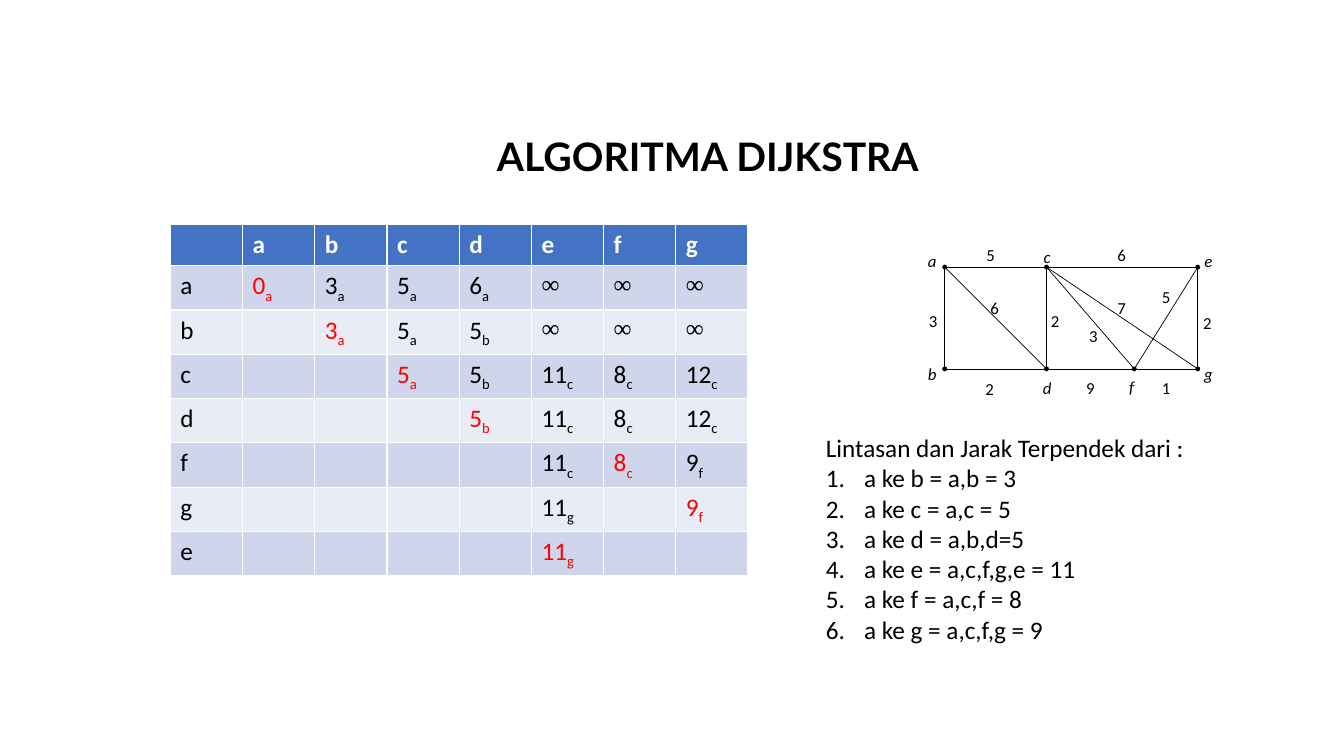
from lxml import etree
from pptx import Presentation
from pptx import util as u
from pptx.dml.color import RGBColor
from pptx.enum import shapes, text
from pptx.oxml import ns

BLACK = RGBColor(0x00, 0x00, 0x00)
WHITE = RGBColor(0xFF, 0xFF, 0xFF)
RED = RGBColor(0xFF, 0x00, 0x00)
BLUE = RGBColor(0x44, 0x72, 0xC4)
BANDS = (RGBColor(0xE9, 0xEB, 0xF5), RGBColor(0xCF, 0xD5, 0xEA))

# Distance table: node reached, then "distance + previous node" per column
COLS = "abcdefg"
STEPS = [
    ("a", "0a 3a 5a 6a ∞ ∞ ∞"),
    ("b", "- 3a 5a 5b ∞ ∞ ∞"),
    ("c", "- - 5a 5b 11c 8c 12c"),
    ("d", "- - - 5b 11c 8c 12c"),
    ("f", "- - - - 11c 8c 9f"),
    ("g", "- - - - 11g - 9f"),
    ("e", "- - - - 11g - -"),
]

# Graph: nodes, inner edges, labels by left and top
TOP, LOW = 2.65, 3.66
NODES = {"a": (9.37, TOP), "c": (10.38, TOP), "e": (11.88, TOP),
         "b": (9.37, LOW), "d": (10.38, LOW), "f": (11.25, LOW),
         "g": (11.88, LOW)}
EDGES = ("cd", "ad", "cg", "cf", "fe")
NAMES = [("a", 9.14, 2.44), ("b", 9.14, 3.56), ("c", 10.28, 2.4),
         ("d", 10.28, 3.7), ("e", 11.88, 2.44), ("f", 11.12, 3.69),
         ("g", 11.88, 3.56)]
COSTS = [("1", 11.5, 3.7), ("9", 10.75, 3.7), ("2", 9.75, 3.71),
         ("3", 9.19, 3.03), ("2", 11.91, 3.05), ("6", 11.06, 2.38),
         ("5", 9.76, 2.38), ("3", 10.78, 3.18), ("6", 9.8, 2.9),
         ("2", 10.4, 3.03), ("5", 11.5, 2.8), ("7", 11.06, 2.9)]

HEAD = "Lintasan dan Jarak Terpendek dari :"
PATHS = ["a ke b = a,b = 3", "a ke c = a,c = 5", "a ke d = a,b,d=5",
         "a ke e = a,c,f,g,e = 11", "a ke f = a,c,f = 8",
         "a ke g = a,c,f,g = 9"]


class Page:
    """Style and current slide."""

    def __init__(self, slide):
        self.slide = slide
        self.items = slide.shapes

    def place(self, item, x, y, w, h):
        item.left, item.top = u.Inches(x), u.Inches(y)
        item.width, item.height = u.Inches(w), u.Inches(h)

    def style(self, par, size, color=BLACK, name="Calibri", bold=False,
              slant=False):
        font = par.font
        font.size, font.name = u.Pt(size), name
        font.bold, font.italic = bold, slant
        font.color.rgb = color

    def title(self, words, x, y, w, h):
        item = self.items.title
        self.place(item, x, y, w, h)
        frame = item.text_frame
        frame.auto_size = text.MSO_AUTO_SIZE.NONE
        frame.vertical_anchor = text.MSO_ANCHOR.MIDDLE
        frame.text = words
        par = frame.paragraphs[0]
        par.alignment = text.PP_ALIGN.CENTER
        par.line_spacing = 0.9
        self.style(par, 28, name="Lato", bold=True)

    def bullet(self, par, tag, indent, **attrs):
        props = par._p.get_or_add_pPr()
        props.set("marL", str(u.Inches(indent)))
        props.set("indent", str(-u.Inches(indent)))
        etree.SubElement(props, ns.qn("a:" + tag), **attrs)

    def list(self, head, lines, x, y, w, h):
        item = self.slide.placeholders[1]
        self.place(item, x, y, w, h)
        frame = item.text_frame
        frame.auto_size = text.MSO_AUTO_SIZE.NONE
        frame.vertical_anchor = text.MSO_ANCHOR.TOP
        frame.text = "\n".join([head, *lines])
        for i, par in enumerate(frame.paragraphs):
            if i:
                self.bullet(par, "buAutoNum", 0.38, type="arabicPeriod")
            else:
                self.bullet(par, "buNone", 0)
            par.space_before = u.Pt(0)
            self.style(par, 18)

    def cell(self, cell, words, fill, color=BLACK, bold=False):
        cell.fill.solid()
        cell.fill.fore_color.rgb = fill
        par = cell.text_frame.paragraphs[0]
        name = "Times New Roman" if words == "∞" else "Calibri"
        self.style(par, 18, color, name, bold)
        if len(words) > 1:
            par.add_run().text = words[:-1]
            sub = par.add_run()
            sub.text = words[-1]
            sub.font._element.set("baseline", "-25000")
        elif words:
            par.add_run().text = words

    def table(self, x, y, w, h):
        grid = self.items.add_table(
            len(STEPS) + 1, len(COLS) + 1, u.Inches(x), u.Inches(y),
            u.Inches(w), u.Inches(h)).table
        for j, name in enumerate(" " + COLS):
            self.cell(grid.cell(0, j), name.strip(), BLUE, WHITE, True)
        for i, (node, row) in enumerate(STEPS, 1):
            self.cell(grid.cell(i, 0), node, BANDS[i % 2])
            for j, (col, item) in enumerate(zip(COLS, row.split()), 1):
                color = RED if col == node else BLACK
                self.cell(grid.cell(i, j), item.strip("-"), BANDS[i % 2],
                          color)

    def shape(self, kind, x, y, w, h, fill=None):
        item = self.items.add_shape(kind, u.Inches(x), u.Inches(y),
                                    u.Inches(w), u.Inches(h))
        item.shadow.inherit = False
        if fill is None:
            item.fill.background()
        else:
            item.fill.solid()
            item.fill.fore_color.rgb = fill
        item.line.color.rgb = BLACK
        item.line.width = u.Pt(0.5)

    def line(self, start, end):
        ends = [u.Inches(v) for v in (*start, *end)]
        item = self.items.add_connector(shapes.MSO_CONNECTOR.STRAIGHT, *ends)
        item.line.color.rgb = BLACK
        item.line.width = u.Pt(0.5)
        etree.SubElement(item._element.spPr, ns.qn("a:effectLst"))

    def label(self, words, x, y, w, slant=False):
        item = self.items.add_textbox(u.Inches(x), u.Inches(y),
                                      u.Inches(w), u.Inches(0.25))
        frame = item.text_frame
        frame.word_wrap = True
        frame.margin_left = frame.margin_right = 0
        frame.text = words
        par = frame.paragraphs[0]
        par.alignment = text.PP_ALIGN.CENTER
        self.style(par, 12, slant=slant)


def main():
    deck = Presentation()
    deck.slide_width, deck.slide_height = u.Inches(13.33), u.Inches(7.5)
    page = Page(deck.slides.add_slide(deck.slide_layouts[1]))

    # Title and table
    page.title("ALGORITMA DIJKSTRA", 1.69, 1.13, 10.66, 0.89)
    page.table(1.69, 2.23, 5.73, 3.25)

    # Graph
    left, right = NODES["a"][0], NODES["e"][0]
    page.shape(shapes.MSO_SHAPE.RECTANGLE, left, TOP, right - left, LOW - TOP)
    for start, end in EDGES:
        page.line(NODES[start], NODES[end])
    for x, y in NODES.values():
        page.shape(shapes.MSO_SHAPE.OVAL, x - 0.02, y - 0.02, 0.04, 0.04,
                   BLACK)
    for name, x, y in NAMES:
        page.label(name, x, y, 0.21, slant=True)
    for cost, x, y in COSTS:
        page.label(cost, x, y, 0.13)

    # Shortest paths
    page.list(HEAD, PATHS, 8.09, 4.24, 4.66, 2.22)
    deck.save("out.pptx")


if __name__ == "__main__":
    main()
